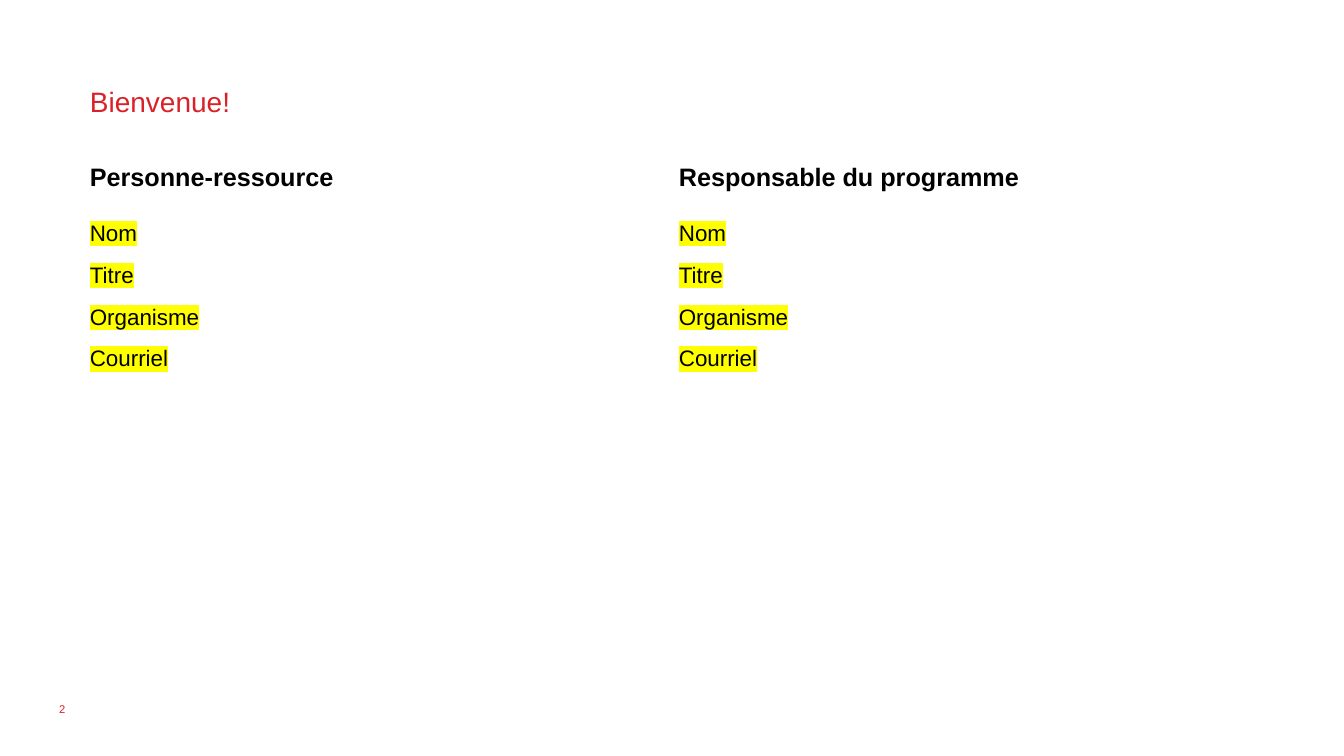
"""Build the welcome slide with its two-column contact table."""
from dataclasses import dataclass

from lxml import etree
from pptx import Presentation
from pptx.dml.color import RGBColor
from pptx.enum.text import MSO_ANCHOR, MSO_AUTO_SIZE, PP_ALIGN
from pptx.oxml.ns import qn
from pptx.util import Emu, Pt

TOP, MIDDLE = MSO_ANCHOR.TOP, MSO_ANCHOR.MIDDLE
LEFT = PP_ALIGN.LEFT
NO_AUTOFIT = MSO_AUTO_SIZE.NONE
EMU_PER_PX = 9525
TITLE_ONLY_LAYOUT = 5


@dataclass(frozen=True)
class Theme:
    font: str = "Arial"
    red: str = "DA2127"
    black: str = "000000"
    highlight: str = "FFFF00"
    title_size: int = 20
    heading_size: int = 18
    detail_size: int = 16
    number_size: int = 8
    detail_line: float = 20.8
    detail_gap: int = 9


@dataclass(frozen=True)
class Box:
    left: int
    top: int
    width: int
    height: int


@dataclass(frozen=True)
class Contact:
    heading: str
    details: tuple[str, ...]


THEME = Theme()
SLIDE_WIDTH, SLIDE_HEIGHT = 1280, 720
TITLE_BOX = Box(76, 76, 341, 74)
NUMBER_BOX = Box(47, 656, 288, 38)
TABLE_BOX = Box(76, 151, 1122, 238)
HEADING_HEIGHT = 51
DETAILS = ("Nom", "Titre", "Organisme", "Courriel")
CONTACTS = (
    Contact("Personne-ressource", DETAILS),
    Contact("Responsable du programme", DETAILS),
)


def px(length: int) -> Emu:
    return Emu(length * EMU_PER_PX)


def bounds(box: Box) -> tuple[Emu, Emu, Emu, Emu]:
    return px(box.left), px(box.top), px(box.width), px(box.height)


def add_text(paragraph, text: str, size: int, color: str,
             bold: bool = False, highlight: str = "") -> None:
    paragraph.alignment = LEFT
    run = paragraph.add_run()
    run.text = text
    run.font.size = Pt(size)
    run.font.bold = bold
    run.font.color.rgb = RGBColor.from_string(color)
    if highlight:
        marker = etree.SubElement(run.font.fill._xPr, qn("a:highlight"))
        etree.SubElement(marker, qn("a:srgbClr"), val=highlight)
    run.font.name = THEME.font


def add_title(slide) -> None:
    title = slide.shapes.title
    title.left, title.top, title.width, title.height = bounds(TITLE_BOX)
    frame = title.text_frame
    frame.auto_size = NO_AUTOFIT
    frame.word_wrap = True
    frame.vertical_anchor = TOP
    add_text(frame.paragraphs[0], "Bienvenue!", THEME.title_size, THEME.red)


def add_slide_number(slide) -> None:
    frame = slide.shapes.add_textbox(*bounds(NUMBER_BOX)).text_frame
    frame.word_wrap = True
    frame.vertical_anchor = MIDDLE
    add_text(frame.paragraphs[0], "2", THEME.number_size, THEME.red)


def fill_details(cell, details: tuple[str, ...]) -> None:
    frame = cell.text_frame
    for index, detail in enumerate(details):
        paragraph = frame.add_paragraph() if index else frame.paragraphs[0]
        paragraph.line_spacing = Pt(THEME.detail_line)
        paragraph.space_after = Pt(THEME.detail_gap)
        add_text(paragraph, detail, THEME.detail_size, THEME.black,
                 highlight=THEME.highlight)


def add_contact_table(slide) -> None:
    table = slide.shapes.add_table(2, len(CONTACTS), *bounds(TABLE_BOX)).table
    table.first_row = False
    table.horz_banding = False
    table.rows[0].height = px(HEADING_HEIGHT)
    table.rows[1].height = px(TABLE_BOX.height - HEADING_HEIGHT)
    for column, contact in enumerate(CONTACTS):
        heading, details = table.cell(0, column), table.cell(1, column)
        for cell in (heading, details):
            cell.fill.background()
            cell.vertical_anchor = TOP
        add_text(heading.text_frame.paragraphs[0], contact.heading,
                 THEME.heading_size, THEME.black, bold=True)
        fill_details(details, contact.details)


def main() -> None:
    presentation = Presentation()
    presentation.slide_width = px(SLIDE_WIDTH)
    presentation.slide_height = px(SLIDE_HEIGHT)
    layout = presentation.slide_layouts[TITLE_ONLY_LAYOUT]
    slide = presentation.slides.add_slide(layout)
    add_title(slide)
    add_slide_number(slide)
    add_contact_table(slide)
    presentation.save("out.pptx")


if __name__ == "__main__":
    main()
